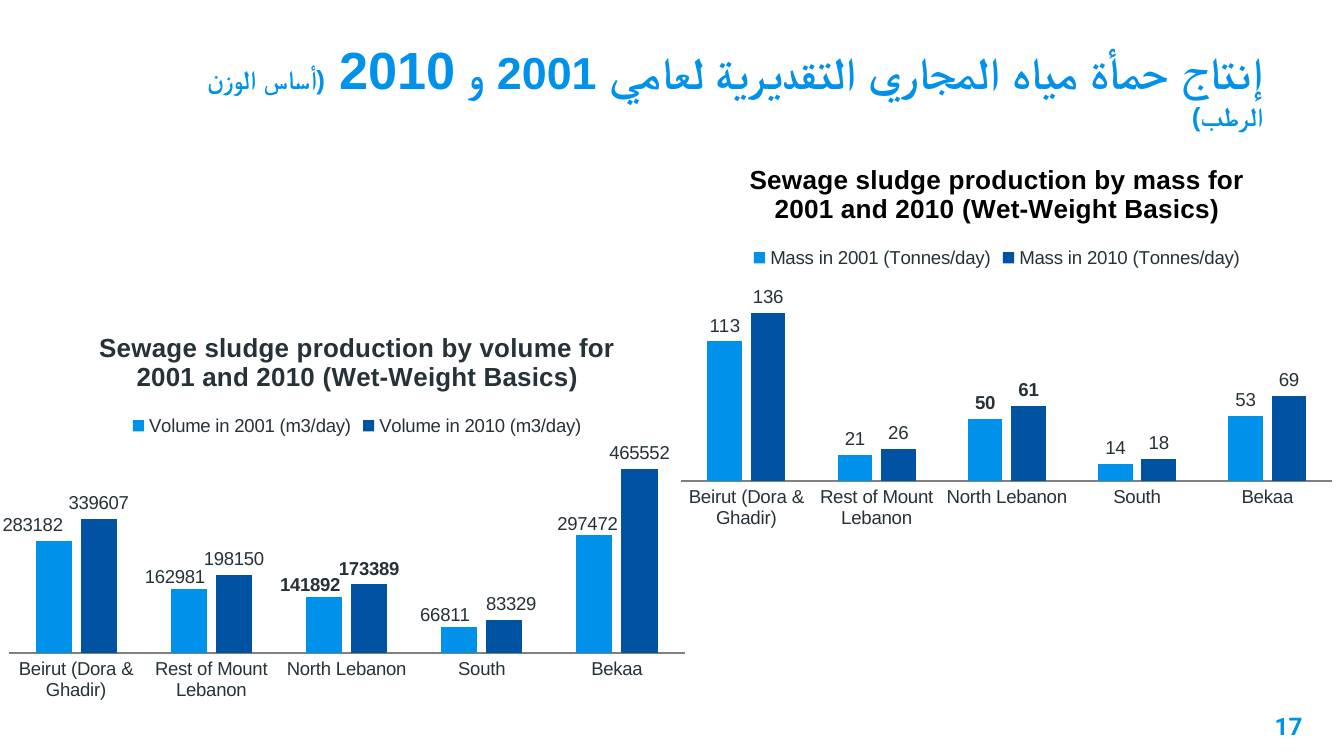
from lxml import etree
from pptx import Presentation
from pptx.chart import data
from pptx.dml.color import RGBColor
from pptx.enum import chart as ch, text
from pptx.oxml import ns
from pptx.util import Pt

SKY = RGBColor(0x00, 0x91, 0xEA)
NAVY = RGBColor(0x00, 0x53, 0xA3)
INK = RGBColor(0x26, 0x32, 0x38)
BLACK = RGBColor(0, 0, 0)
GREY = RGBColor(0x80, 0x80, 0x80)

AREAS = ["Beirut (Dora & Ghadir)", "Rest of Mount Lebanon",
         "North Lebanon", "South", "Bekaa"]
NORTH = AREAS.index("North Lebanon")


def add(parent, tag, **attrs):
    return etree.SubElement(parent, ns.qn(tag), attrs)


def layout(*pairs):
    """Return a manual chart layout with the given tag and value pairs."""
    root = etree.Element(ns.qn("c:layout"))
    manual = add(root, "c:manualLayout")
    for tag, val in pairs:
        add(manual, f"c:{tag}", val=str(val))
    return root


class Deck:
    def __init__(self, wide, high):
        self.prs = Presentation()
        self.prs.slide_width, self.prs.slide_height = Pt(wide), Pt(high)
        self.slide = self.prs.slides.add_slide(self.prs.slide_layouts[5])

    def style(self, font, size, color, bold=False, name="Arial"):
        font.name, font.size, font.bold = name, Pt(size), bold
        font.color.rgb = color

    def frame(self, shape, anchor):
        """Set margins, wrapping and anchor; return the first paragraph."""
        tf = shape.text_frame
        tf.word_wrap, tf.auto_size = True, text.MSO_AUTO_SIZE.NONE
        tf.vertical_anchor = anchor
        tf.margin_left = tf.margin_right = Pt(7.2)
        tf.margin_top = tf.margin_bottom = Pt(7.2)
        para = tf.paragraphs[0]
        para.alignment = text.PP_ALIGN.RIGHT
        return para

    def run(self, para, words, size, color, bold=True, name="Arial"):
        run = para.add_run()
        run.text = words
        self.style(run.font, size, color, bold, name)
        return run

    def title(self, box, parts):
        shape = self.slide.shapes.title
        shape.left, shape.top, shape.width, shape.height = map(Pt, box)
        para = self.frame(shape, text.MSO_ANCHOR.BOTTOM)
        para._p.get_or_add_pPr().set("rtl", "1")
        for words, size in parts:
            run = self.run(para, words, size, SKY, name="Roboto Slab")
            add(run._r.get_or_add_rPr(), "a:cs", typeface="Arial")

    def number(self, box, words):
        shape = self.slide.shapes.add_textbox(*map(Pt, box))
        para = self.frame(shape, text.MSO_ANCHOR.TOP)
        self.run(para, words, 13, SKY, name="Roboto")

    def label(self, series, index, shift=None):
        """Format one point label, moved by a share of the chart's size."""
        label = series.points[index].data_label
        self.style(label.font, 10, INK, index == NORTH)
        label.position = ch.XL_LABEL_POSITION.OUTSIDE_END
        if shift:
            mark = label._dLbl.find(ns.qn("c:idx"))
            mark.addnext(layout(("x", shift[0]), ("y", shift[1])))

    def chart(self, box, head, color, plot, top, rows, shifts):
        """Draw a column chart; shifts maps (series, point) to an offset."""
        source = data.CategoryChartData()
        source.categories = AREAS
        for name, vals in rows:
            source.add_series(name, vals)
        chart = self.slide.shapes.add_chart(
            ch.XL_CHART_TYPE.COLUMN_CLUSTERED, *map(Pt, box), source).chart
        self.style(chart.font, 10, INK)

        chart.has_title = True
        self.run(chart.chart_title.text_frame.paragraphs[0], head, 14, color)
        chart.chart_title.include_in_layout = False
        chart.has_legend = True
        chart.legend.position = ch.XL_LEGEND_POSITION.TOP
        chart.legend.include_in_layout = False
        self.style(chart.legend.font, 10, INK)

        axis = chart.category_axis
        axis.major_tick_mark = axis.minor_tick_mark = ch.XL_TICK_MARK.NONE
        axis.format.line.color.rgb = GREY
        self.style(axis.tick_labels.font, 10, INK)
        scale = chart.value_axis
        scale.visible = scale.has_major_gridlines = False
        scale.minimum_scale, scale.maximum_scale = 0, top

        bars = chart.plots[0]
        bars.gap_width, bars.overlap, bars.vary_by_categories = 150, -25, False
        for row, (series, fill) in enumerate(zip(bars.series, (SKY, NAVY))):
            series.format.fill.solid()
            series.format.fill.fore_color.rgb = fill
            labels = series.data_labels
            labels.show_value = True
            labels.position = ch.XL_LABEL_POSITION.OUTSIDE_END
            self.style(labels.font, 10, INK)
            for index in range(len(AREAS)):
                shift = shifts.get((row, index))
                if shift or index == NORTH:
                    self.label(series, index, shift)

        area = chart._chartSpace.chart.plotArea
        for old in area.findall(ns.qn("c:layout")):
            area.remove(old)
        area.insert(0, layout(
            ("layoutTarget", "inner"), ("xMode", "edge"), ("yMode", "edge"),
            *zip("xywh", plot)))


def main():
    deck = Deck(720, 405)
    deck.title((90, 16.5, 594, 61.2), [
        ("إنتاج حمأة مياه المجاري التقديرية لعامي 2001 و ", 24),
        ("2010 ", 28),
        ("(أساس الوزن الرطب)", 14)])
    deck.number((661.7, 373.7, 43.2, 31), "17")
    deck.chart(
        (354.2, 76.3, 360, 216),
        "Sewage sludge production by mass for 2001 and 2010 "
        "(Wet-Weight Basics)",
        BLACK, (0.03, 0.35, 0.97, 0.49), 160,
        [("Mass in 2001 (Tonnes/day)", (113, 21, 50, 14, 53)),
         ("Mass in 2010 (Tonnes/day)", (136, 26, 61, 18, 69))], {})
    deck.chart(
        (1.4, 166.3, 376.6, 216),
        "Sewage sludge production by volume for 2001 and 2010 "
        "(Wet-Weight Basics)",
        INK, (0, 0.36, 0.97, 0.49), 500000,
        [("Volume in 2001 (m3/day)", (283182, 162981, 141892, 66811, 297472)),
         ("Volume in 2010 (m3/day)", (339607, 198150, 173389, 83329, 465552))],
        {(0, 0): (-0.03, 0), (0, 1): (-0.02, 0.01), (0, 2): (-0.02, 0.01),
         (0, 3): (-0.02, 0.01), (0, 4): (-0.01, 0.01), (1, 3): (0.01, 0)})
    deck.prs.save("out.pptx")


if __name__ == "__main__":
    main()
